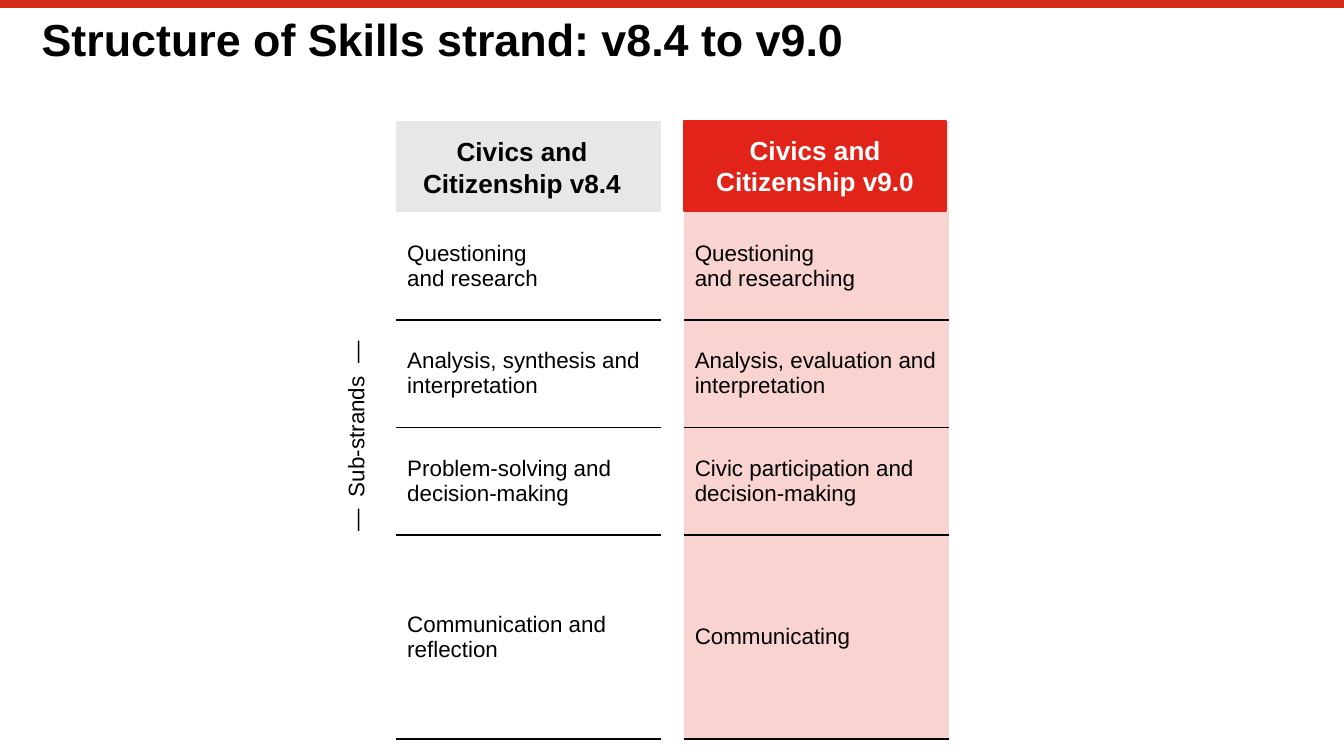
"""Build the slide comparing the Skills strand in v8.4 and v9.0."""
from lxml import etree
from pptx import Presentation
from pptx.dml.color import RGBColor
from pptx.enum import shapes, text
from pptx.oxml import ns
from pptx.util import Inches, Pt

COLOURS = {"bar": "D52B1E", "red": "E2231A", "pink": "F8D3D0",
           "grey": "E6E7E8", "black": "000000", "white": "FFFFFF"}
NO_STYLE = "{2D5ABB26-0587-4C30-8999-92F81FD0307C}"
SUB_STRANDS = [
    ("Questioning \nand research", "Questioning \nand researching"),
    ("Analysis, synthesis and interpretation", "Analysis, evaluation and interpretation"),
    ("Problem-solving and decision-making", "Civic participation and decision-making"),
    ("Communication and reflection", "Communicating"),
]


def colour(name):
    return RGBColor.from_string(COLOURS[name])


def write(frame, wording, size, ink="black", bold=False, align=None, spacing=None):
    paragraph = frame.paragraphs[0]
    paragraph.alignment = align
    paragraph.line_spacing = spacing
    for number, line in enumerate(wording.split("\n")):
        if number:
            paragraph.add_line_break()
        run = paragraph.add_run()
        run.text = line
        run.font.name = "Arial"
        run.font.size = Pt(size)
        run.font.bold = bold
        run.font.color.rgb = colour(ink)
    return paragraph


prs = Presentation()
prs.slide_width, prs.slide_height = Inches(10), Inches(10) * 9 // 16
slide = prs.slides.add_slide(prs.slide_layouts[6])

top_bar = slide.shapes.add_connector(
    shapes.MSO_CONNECTOR.STRAIGHT, Inches(0), Inches(0.03), Inches(10), Inches(0.03))
top_bar.line.color.rgb = colour("bar")
top_bar.line.width = Pt(4.2)
etree.SubElement(top_bar._element.spPr, ns.qn("a:effectLst"))

title = slide.shapes.add_textbox(Inches(0.31), Inches(0.12), Inches(9.29), Inches(0.39)).text_frame
title.word_wrap = True
title.vertical_anchor = text.MSO_ANCHOR.MIDDLE
title.margin_left = title.margin_right = title.margin_top = title.margin_bottom = 0
write(title, "Structure of Skills strand: v8.4 to v9.0", 24, bold=True, spacing=0.9)

widths = [0.41, 1.97, 0.17, 1.97, 0.17]
heights = [0.68, 0.8, 0.8, 0.8, 0.65]
strands = slide.shapes.add_table(
    len(heights), len(widths), Inches(2.54), Inches(0.9),
    Inches(sum(widths)), Inches(sum(heights))).table
strands.first_row = strands.horz_banding = False
strands._tbl.tblPr.find(ns.qn("a:tableStyleId")).text = NO_STYLE
for column, width in zip(strands.columns, widths):
    column.width = Inches(width)
for row, height in zip(strands.rows, heights):
    row.height = Inches(height)
for cell in strands.iter_cells():
    cell.fill.background()
    cell.margin_left = cell.margin_right = cell.margin_top = cell.margin_bottom = 0
    cell.vertical_anchor = text.MSO_ANCHOR.MIDDLE

side_label = strands.cell(0, 0)
side_label.merge(strands.cell(4, 0))
side_label.vertical_anchor = text.MSO_ANCHOR.TOP
side_label._tc.get_or_add_tcPr().set("vert", "vert270")
side_text = write(side_label.text_frame, "—  Sub-strands  —", 12,
                  align=text.PP_ALIGN.CENTER, spacing=1.1)

old_header = strands.cell(0, 1)
old_header.margin_left = old_header.margin_right = Inches(0.05)
old_text = write(old_header.text_frame, "Civics and Citizenship v8.4", 14, bold=True,
                 align=text.PP_ALIGN.CENTER, spacing=1.1)
for paragraph in (side_text, old_text):
    paragraph.space_after = Pt(6)
    paragraph._p.get_or_add_pPr().set("marR", str(Inches(0.1)))
for column in (1, 3):
    header = strands.cell(0, column)
    header.fill.solid()
    header.fill.fore_color.rgb = colour("grey")

for row, versions in enumerate(SUB_STRANDS, 1):
    for column, wording in zip((1, 3), versions):
        cell = strands.cell(row, column)
        sub_strand = write(cell.text_frame, wording, 12)
        sub_strand._p.get_or_add_pPr().set("marL", str(Inches(0.08)))
        if column == 3:
            cell.fill.solid()
            cell.fill.fore_color.rgb = colour("pink")
        edges = ["a:lnB"] if row == 1 else ["a:lnT", "a:lnB"]
        for place, edge in enumerate(edges):
            rule = etree.Element(ns.qn(edge), w=str(Pt(1)))
            ink = etree.SubElement(rule, ns.qn("a:solidFill"))
            etree.SubElement(ink, ns.qn("a:srgbClr"), val=COLOURS["black"])
            cell._tc.get_or_add_tcPr().insert(place, rule)

new_header = slide.shapes.add_group_shape()
panel = new_header.shapes.add_shape(
    shapes.MSO_SHAPE.RECTANGLE, Inches(5.09), Inches(0.9), Inches(1.95), Inches(0.67))
panel.shadow.inherit = False
panel.fill.solid()
panel.fill.fore_color.rgb = colour("red")
panel.line.color.rgb = colour("red")
panel.line.width = Pt(1)
new_name = new_header.shapes.add_textbox(
    Inches(5.09), Inches(0.95), Inches(1.95), Inches(0.57)).text_frame
new_name.word_wrap = True
new_name.auto_size = text.MSO_AUTO_SIZE.SHAPE_TO_FIT_TEXT
write(new_name, "Civics and Citizenship v9.0", 14, "white", True, text.PP_ALIGN.CENTER)

prs.save("out.pptx")
